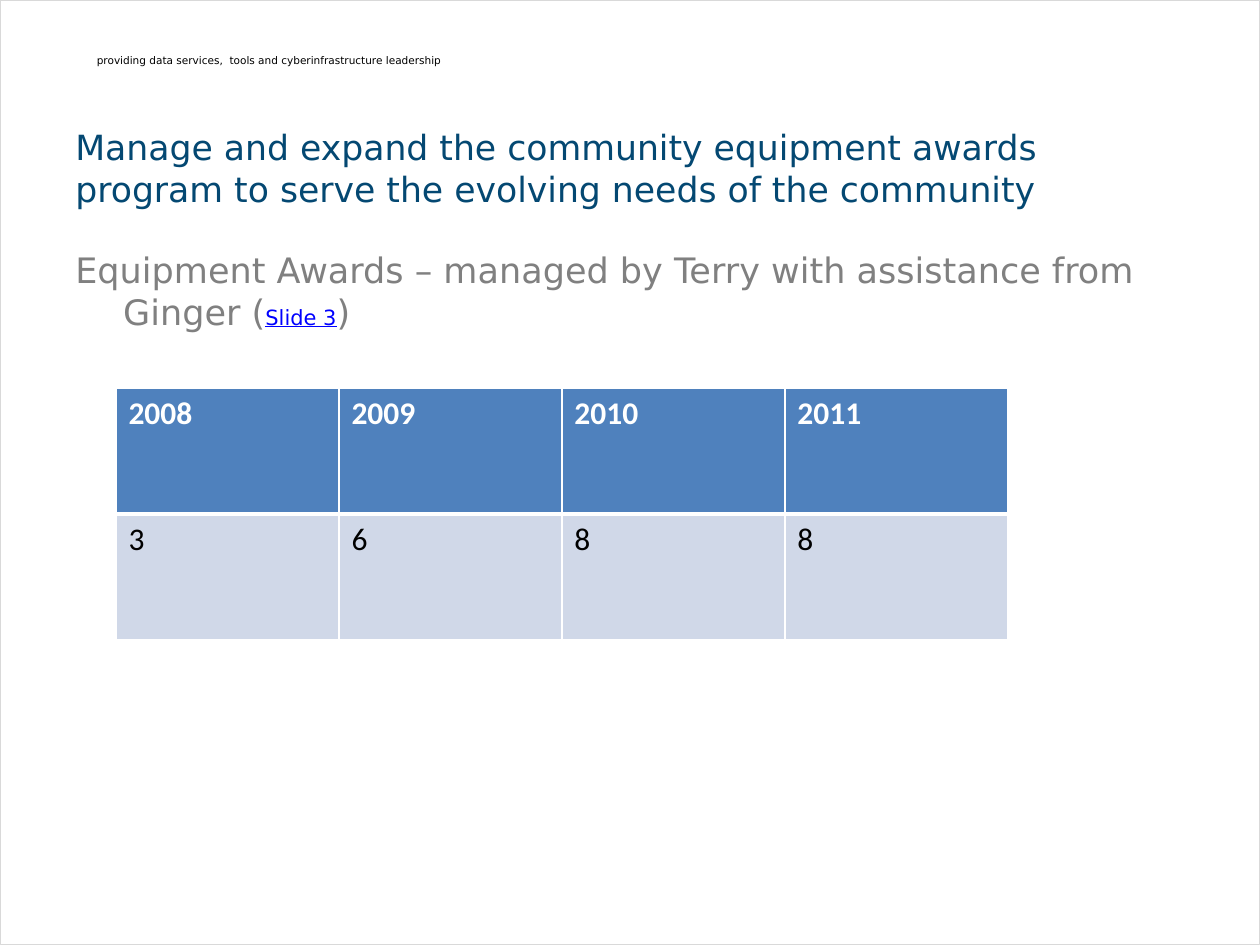
from lxml.etree import SubElement
from pptx import Presentation
from pptx.dml.color import RGBColor
from pptx.enum.shapes import MSO_SHAPE
from pptx.enum.text import MSO_ANCHOR
from pptx.oxml.ns import qn
from pptx.util import Inches, Pt

COLORS = {
    "white": "FFFFFF", "black": "000000", "frame": "D9D9D9", "title": "044872",
    "body": "808080", "link": "0000FF", "header": "4F81BD", "band": "D0D8E8",
}


def rgb(name):
    return RGBColor.from_string(COLORS[name])


def add_run(p, text, size, color, font="DejaVu Sans", bold=False, underline=False):
    r = p.add_run()
    r.text = text
    r.font.name = font
    r.font.size = Pt(size)
    r.font.color.rgb = rgb(color)
    r.font.bold = bold
    r.font.underline = underline


def set_borders(cell, bottom):
    tcPr = cell._tc.get_or_add_tcPr()
    for i, (side, width) in enumerate(zip("LRTB", (1, 1, 1, bottom))):
        ln = SubElement(tcPr, qn(f"a:ln{side}"), w=str(Pt(width)))
        fill = SubElement(ln, qn("a:solidFill"))
        SubElement(fill, qn("a:srgbClr"), val=COLORS["white"])
        tcPr.remove(ln)
        tcPr.insert(i, ln)


class SlideBuilder:
    """Hold the style and the current slide."""

    def __init__(self, prs):
        self.s = prs.slides.add_slide(prs.slide_layouts[6])

    def frame(self, width, height):
        sp = self.s.shapes.add_shape(MSO_SHAPE.RECTANGLE, 0, 0, width, height)
        sp.shadow.inherit = False
        sp.fill.solid()
        sp.fill.fore_color.rgb = rgb("white")
        sp.line.color.rgb = rgb("frame")
        sp.line.width = Pt(0.5)

    def text(self, box, runs, wrap=True, anchor=MSO_ANCHOR.TOP, hanging=0):
        sp = self.s.shapes.add_textbox(*map(Inches, box))
        tf = sp.text_frame
        tf.word_wrap = wrap
        tf.vertical_anchor = anchor
        p = tf.paragraphs[0]
        if hanging:
            pPr = p._p.get_or_add_pPr()
            pPr.set("marL", str(Inches(hanging)))
            pPr.set("indent", str(-Inches(hanging)))
        for text, size, color, *underline in runs:
            add_run(p, text, size, color, underline=bool(underline))

    def table(self, box, rows):
        shape = self.s.shapes.add_table(len(rows), len(rows[0]), *map(Inches, box))
        for i, row in enumerate(rows):
            head = i == 0
            for j, value in enumerate(row):
                cell = shape.table.cell(i, j)
                cell.fill.solid()
                cell.fill.fore_color.rgb = rgb("header" if head else "band")
                set_borders(cell, bottom=3 if head else 1)
                add_run(cell.text_frame.paragraphs[0], value, 18,
                        "white" if head else "black", font="Calibri", bold=head)


def main():
    prs = Presentation()
    prs.slide_width, prs.slide_height = Inches(10), Inches(7.5)
    b = SlideBuilder(prs)
    b.frame(prs.slide_width, prs.slide_height)
    b.text((0.67, 0.38, 2.95, 0.2), [
        ("providing data services,  tools and cyberinfrastructure leadership", 6, "black"),
    ], wrap=False)
    b.text((0.5, 0.97, 9, 0.72), [
        ("Manage and expand the community equipment awards program "
         "to serve the evolving needs of the community", 19.8, "title"),
    ], anchor=MSO_ANCHOR.MIDDLE)
    b.text((0.5, 1.92, 9, 4.75), [
        ("Equipment Awards – managed by Terry with assistance from Ginger (", 20, "body"),
        ("Slide 3", 12, "link", True),
        (")", 20, "body"),
    ], hanging=0.38)
    b.table((0.92, 3.08, 7.08, 2), [
        ("2008", "2009", "2010", "2011"),
        ("3", "6", "8", "8"),
    ])
    prs.save("out.pptx")


if __name__ == "__main__":
    main()
